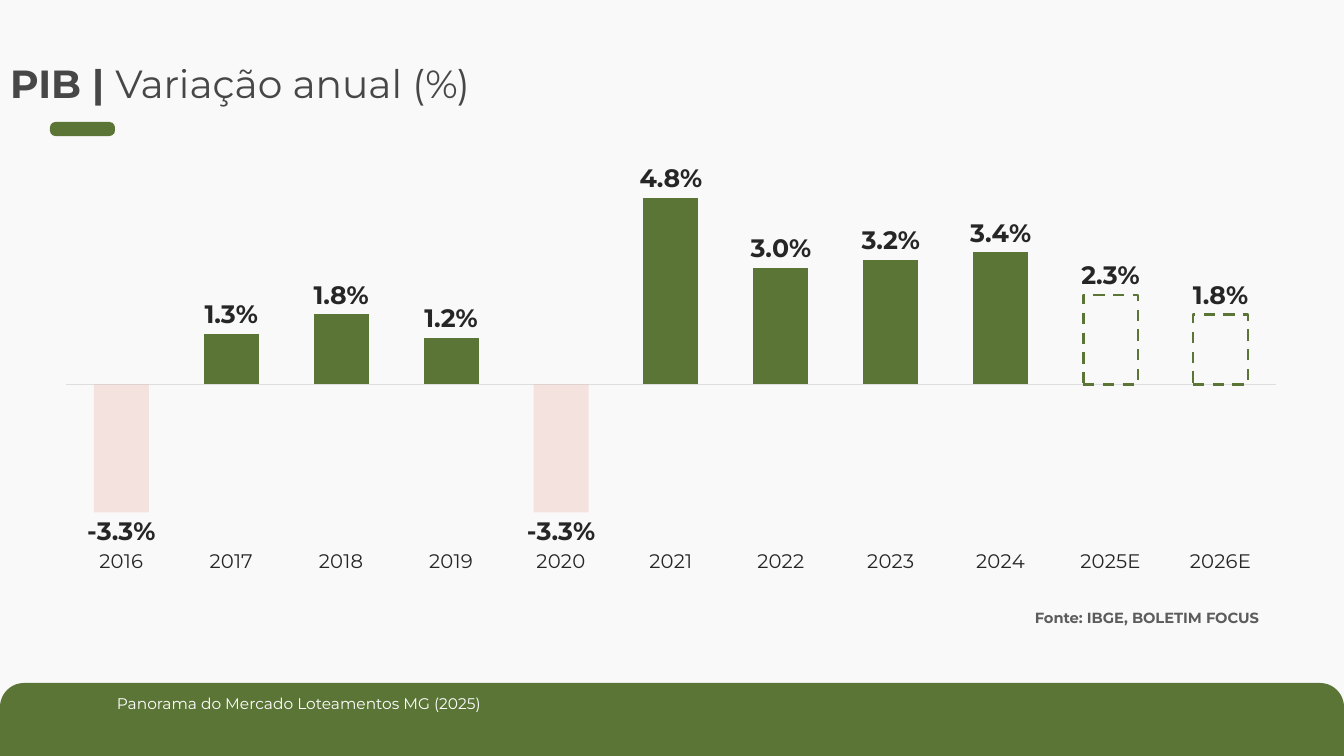
from dataclasses import dataclass

from lxml import etree
from pptx import Presentation
from pptx.chart.data import CategoryChartData
from pptx.dml.color import RGBColor
from pptx.enum.chart import XL_CHART_TYPE, XL_LABEL_POSITION, XL_TICK_LABEL_POSITION, XL_TICK_MARK
from pptx.enum.dml import MSO_LINE
from pptx.enum.shapes import MSO_SHAPE
from pptx.enum.text import MSO_ANCHOR, PP_ALIGN
from pptx.oxml.ns import qn
from pptx.util import Emu, Pt

COLUMNS = XL_CHART_TYPE.COLUMN_CLUSTERED
OUTSIDE_END = XL_LABEL_POSITION.OUTSIDE_END
LOW = XL_TICK_LABEL_POSITION.LOW
NO_TICKS = XL_TICK_MARK.NONE
DASH = MSO_LINE.DASH
RECT = MSO_SHAPE.RECTANGLE
ROUNDED = MSO_SHAPE.ROUNDED_RECTANGLE
MIDDLE = MSO_ANCHOR.MIDDLE
LEFT = PP_ALIGN.LEFT

GREEN = RGBColor(0x5B, 0x75, 0x37)
RED = RGBColor(0xD7, 0x5D, 0x45)
PAPER = RGBColor(0xF9, 0xF9, 0xF9)
WHITE = RGBColor(0xFF, 0xFF, 0xFF)
TITLE_GREY = RGBColor(0x47, 0x47, 0x47)
SOURCE_GREY = RGBColor(0x5C, 0x5C, 0x5C)
INK = RGBColor(0x26, 0x26, 0x26)
AXIS_GREY = RGBColor(0xDE, 0xDE, 0xDE)

HEADING_FONT = "Montserrat"
CHART_FONT = "Lato"
SLIDE_WIDTH, SLIDE_HEIGHT = 1344, 756
EMU_PER_PX = 12192000 / SLIDE_WIDTH

GDP_GROWTH = {
    "2016": -0.033, "2017": 0.013, "2018": 0.018, "2019": 0.012,
    "2020": -0.033, "2021": 0.048, "2022": 0.03, "2023": 0.032,
    "2024": 0.034, "2025E": 0.023, "2026E": 0.018,
}
PLOT_AREA = {"x": 0.014, "y": 0.03, "w": 0.972, "h": 0.749}


@dataclass(frozen=True)
class Box:
    left: int
    top: int
    width: int
    height: int

    def emu(self) -> tuple:
        return tuple(px(v) for v in (self.left, self.top, self.width, self.height))


@dataclass(frozen=True)
class Block:
    box: Box
    preset: int
    rounding: float = 0


@dataclass(frozen=True)
class Caption:
    box: Box
    text: str
    size: float
    color: RGBColor
    bold: bool = False


BLOCKS = [
    # Footer band with rounded top corners
    Block(Box(0, 683, SLIDE_WIDTH, 48), ROUNDED, 0.5),
    Block(Box(0, 708, SLIDE_WIDTH, 48), RECT),
    # Accent under the title
    Block(Box(50, 122, 65, 14), ROUNDED, 0.39),
]
CAPTIONS = [
    Caption(Box(1025, 604, 300, 28), "Fonte: IBGE, BOLETIM FOCUS", 10.5, SOURCE_GREY, True),
    Caption(Box(107, 689, 708, 29), "Panorama do Mercado Loteamentos MG (2025)", 11, WHITE),
]


def px(value: int) -> Emu:
    return Emu(round(value * EMU_PER_PX))


def style_font(font, size: float, color: RGBColor, bold: bool = False,
               name: str = HEADING_FONT) -> None:
    font.name, font.size, font.bold = name, Pt(size), bold
    font.color.rgb = color


def add_block(slide, block: Block) -> None:
    shape = slide.shapes.add_shape(block.preset, *block.box.emu())
    shape.shadow.inherit = False
    shape.fill.solid()
    shape.fill.fore_color.rgb = GREEN
    shape.line.fill.background()
    if block.preset == ROUNDED:
        shape.adjustments[0] = block.rounding


def add_caption(slide, caption: Caption) -> None:
    frame = slide.shapes.add_textbox(*caption.box.emu()).text_frame
    frame.word_wrap = True
    run = frame.paragraphs[0].add_run()
    run.text = caption.text
    style_font(run.font, caption.size, caption.color, caption.bold)


def fill_title(slide) -> None:
    title = slide.shapes.title
    title.left, title.top, title.width, title.height = Box(0, 26, SLIDE_WIDTH, 119).emu()
    title.text_frame.vertical_anchor = MIDDLE
    paragraph = title.text_frame.paragraphs[0]
    paragraph.alignment = LEFT
    paragraph.line_spacing = 0.9
    for text, bold in (("PIB | ", True), ("Variação anual (%)", False)):
        run = paragraph.add_run()
        run.text = text
        style_font(run.font, 28, TITLE_GREY, bold)


def place_plot_area(chart) -> None:
    plot_area = chart._chartSpace.find(".//" + qn("c:plotArea"))
    for old_layout in plot_area.findall(qn("c:layout")):
        plot_area.remove(old_layout)
    layout = etree.Element(qn("c:layout"))
    manual = etree.SubElement(layout, qn("c:manualLayout"))
    settings = {"layoutTarget": "inner", "xMode": "edge", "yMode": "edge", **PLOT_AREA}
    for tag, value in settings.items():
        etree.SubElement(manual, qn(f"c:{tag}")).set("val", str(value))
    plot_area.insert(0, layout)


def color_columns(series) -> None:
    series.invert_if_negative = False
    series.format.fill.solid()
    series.format.fill.fore_color.rgb = GREEN
    for index, (year, growth) in enumerate(GDP_GROWTH.items()):
        if growth < 0:
            fill = series.points[index].format.fill
            fill.solid()
            fill.fore_color.rgb = RED
        elif year.endswith("E"):
            column = series.points[index].format
            column.fill.background()
            column.line.color.rgb = GREEN
            column.line.width = Pt(2)
            column.line.dash_style = DASH
    # Recession years are a faint red
    for color in series._element.xpath(f'c:dPt//a:srgbClr[@val="{RED}"]'):
        etree.SubElement(color, qn("a:alpha")).set("val", "14000")


def add_growth_chart(slide, box: Box) -> None:
    data = CategoryChartData(number_format="0.0%")
    data.categories = list(GDP_GROWTH)
    data.add_series("Series 1", list(GDP_GROWTH.values()))
    chart = slide.shapes.add_chart(COLUMNS, *box.emu(), data).chart
    chart.has_legend = False
    chart.has_title = False
    style_font(chart.font, 10, INK, name=CHART_FONT)
    place_plot_area(chart)

    # Axes
    years = chart.category_axis
    years.tick_label_position = LOW
    years.major_tick_mark = years.minor_tick_mark = NO_TICKS
    years.has_major_gridlines = False
    years.format.line.color.rgb = AXIS_GREY
    years.format.line.width = Pt(0.75)
    style_font(years.tick_labels.font, 14, INK)
    rates = chart.value_axis
    rates.minimum_scale, rates.maximum_scale = -0.04, 0.06
    rates.has_major_gridlines = False
    rates.visible = False

    # Columns and their labels
    plot = chart.plots[0]
    plot.gap_width = 100
    plot.vary_by_categories = False
    color_columns(plot.series[0])
    labels = plot.series[0].data_labels
    labels.show_value = True
    labels.number_format = "0.0%"
    labels.number_format_is_linked = False
    labels.position = OUTSIDE_END
    style_font(labels.font, 18, INK, True)


def main() -> None:
    deck = Presentation()
    deck.slide_width, deck.slide_height = px(SLIDE_WIDTH), px(SLIDE_HEIGHT)
    slide = deck.slides.add_slide(deck.slide_layouts[5])
    slide.background.fill.solid()
    slide.background.fill.fore_color.rgb = PAPER
    fill_title(slide)
    add_growth_chart(slide, Box(49, 136, 1244, 518))
    for block in BLOCKS:
        add_block(slide, block)
    for caption in CAPTIONS:
        add_caption(slide, caption)
    deck.save("out.pptx")


if __name__ == "__main__":
    main()
